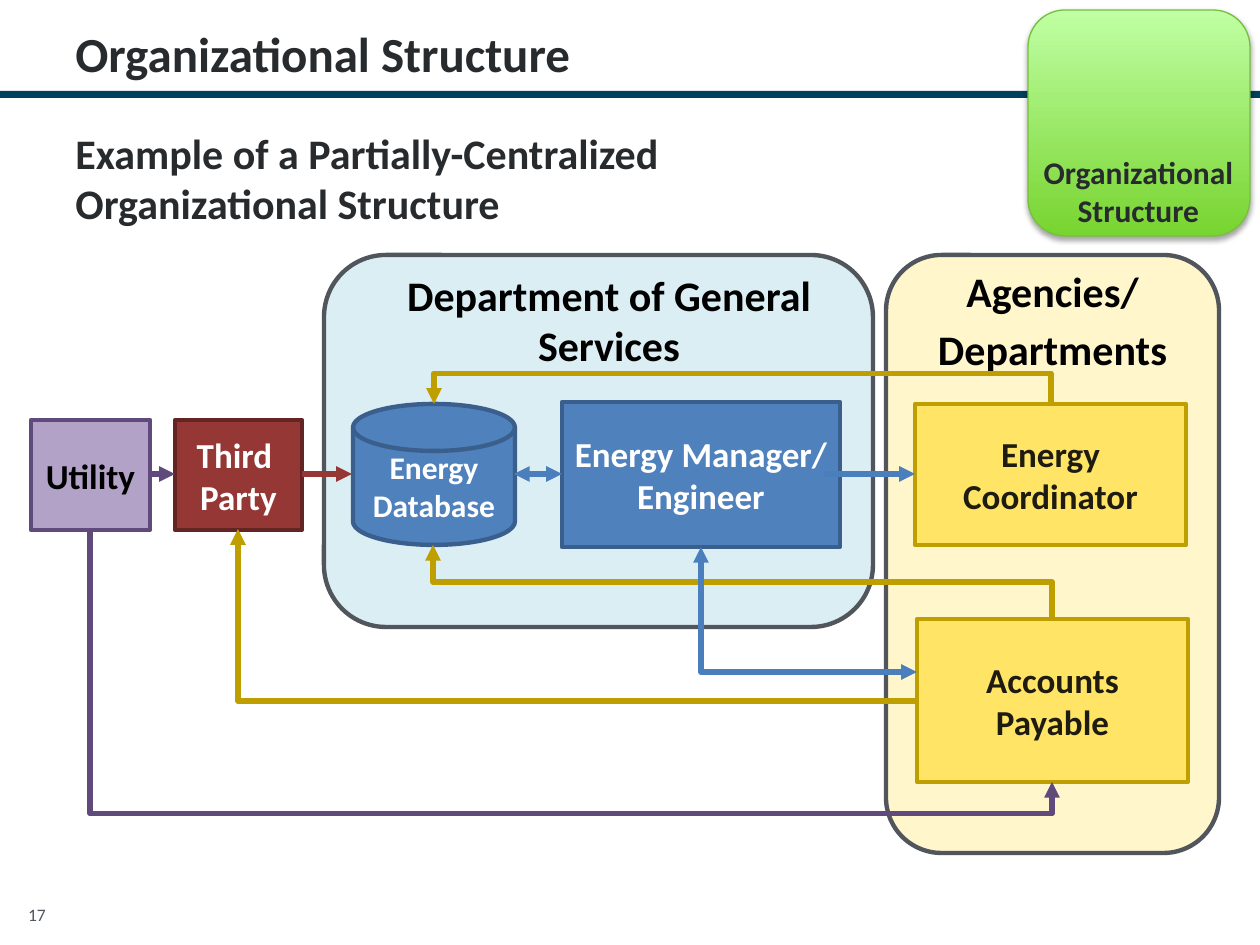
import pptx
import pptx.util
import pptx.dml.color
import pptx.enum.shapes
import pptx.enum.text
import pptx.oxml
import pptx.oxml.ns
import pptx.oxml.xmlchemy
from dataclasses import dataclass

SCALE = 914400 / 126
KIND = pptx.enum.shapes.MSO_SHAPE
LINK = pptx.enum.shapes.MSO_CONNECTOR
ALIGN = pptx.enum.text.PP_ALIGN
ANCHOR = pptx.enum.text.MSO_ANCHOR
qn = pptx.oxml.ns.qn
node = pptx.oxml.xmlchemy.OxmlElement


@dataclass(frozen=True)
class Theme:
    font: str = "Calibri"
    ink: str = "282B2E"
    black: str = "000000"
    white: str = "FFFFFF"
    gray: str = "50565C"
    navy: str = "00425D"
    pale: str = "DBEEF4"
    blue: str = "4F81BD"
    edge: str = "3A5F8C"
    flow: str = "4B7EBC"
    cream: str = "FFF6CC"
    gold: str = "FFE466"
    rim: str = "BF9E00"
    brown: str = "1E1C11"
    red: str = "953735"
    wine: str = "632523"
    lilac: str = "B3A2C7"
    plum: str = "604A7B"
    lime: str = "C0FFA4"
    green: str = "78D430"
    leaf: str = "77C03E"
    title: int = 28
    head: int = 24
    label: int = 20
    small: int = 18
    page: int = 10
    border: float = 2.5
    wire: float = 3


T = Theme()


def px(n):
    return round(n * SCALE)


def rgb(code):
    return pptx.dml.color.RGBColor.from_string(code)


def shift(box, x, y, w, h):
    return box[0] + x, box[1] + y, w, h


def write(shape, text, size=T.label, color=T.ink, bold=True, align=ALIGN.CENTER,
          anchor=ANCHOR.MIDDLE, inset=None, wrap=True, space=None, after=None):
    frame = shape.text_frame
    frame.word_wrap = wrap
    frame.vertical_anchor = anchor
    if inset is not None:
        frame.margin_left = frame.margin_right = px(inset)
        frame.margin_top = frame.margin_bottom = px(inset)
    frame.text = text
    for para in frame.paragraphs:
        para.alignment = align
        para.line_spacing = space
        para.space_after = after
        font = para.font
        font.name, font.size, font.bold = T.font, pptx.util.Pt(size), bold
        font.color.rgb = rgb(color)


def note(slide, box, text, **style):
    shape = slide.shapes.add_textbox(*map(px, box))
    write(shape, text, **{"anchor": ANCHOR.TOP, **style})


def block(slide, box, fill, line=None, kind=KIND.RECTANGLE, text=None, **style):
    shape = slide.shapes.add_shape(kind, *map(px, box))
    shape.shadow.inherit = False
    shape.fill.solid()
    shape.fill.fore_color.rgb = rgb(fill)
    if line:
        shape.line.color.rgb = rgb(line)
        shape.line.width = pptx.util.Pt(T.border)
    else:
        shape.line.fill.background()
    if text:
        write(shape, text, **style)
    return shape


def wire(slide, start, end, color, head=False, tail=True, kind=LINK.STRAIGHT):
    link = slide.shapes.add_connector(kind, *map(px, start + end))
    link.line.color.rgb = rgb(color)
    link.line.width = pptx.util.Pt(T.wire)
    line = link._element.spPr.find(qn("a:ln"))
    for tag, shown in (("a:headEnd", head), ("a:tailEnd", tail)):
        if shown:
            mark = node(tag)
            mark.set("type", "triangle")
            line.append(mark)
    link._element.spPr.append(node("a:effectLst"))
    return link


def bend(slide, start, end, color, turn=None, **ends):
    link = wire(slide, start, end, color, kind=LINK.ELBOW, **ends)
    (x1, y1), (x2, y2) = start, end
    wide, high = abs(y2 - y1), abs(x2 - x1)
    link.left, link.top = px((x1 + x2 - wide) / 2), px((y1 + y2 - high) / 2)
    link.width, link.height = px(wide), px(high)
    frame = link._element.spPr.find(qn("a:xfrm"))
    frame.set("rot", "5400000")
    frame.set("flipH", str(int(y2 < y1)))
    frame.set("flipV", str(int(x2 > x1)))
    shape = link._element.spPr.find(qn("a:prstGeom"))
    if turn is None:
        shape.set("prst", "bentConnector2")
    else:
        guide = node("a:gd")
        guide.set("name", "adj1")
        guide.set("fmla", f"val {round((turn - y1) / (y2 - y1) * 100000)}")
        shape.find(qn("a:avLst")).append(guide)


def header(slide, box):
    block(slide, shift(box, 0, 91, box[2], 7), T.navy)
    note(slide, shift(box, 63, 0, 1134, 116), "Organizational Structure",
         size=T.title, align=ALIGN.LEFT, anchor=ANCHOR.MIDDLE,
         space=pptx.util.Pt(T.title))
    note(slide, shift(box, 63, 121, 869, 115),
         "Example of a Partially-Centralized Organizational Structure",
         size=T.head, align=ALIGN.LEFT)


def badge(slide, box):
    tile = block(slide, box, T.green, T.leaf, KIND.ROUNDED_RECTANGLE)
    tile.line.width = pptx.util.Pt(0.75)
    tile.fill.gradient()
    tile.fill.gradient_angle = 90
    for stop, color in zip(tile.fill.gradient_stops, (T.green, T.lime)):
        stop.color.rgb = rgb(color)
    glow = tile._element.spPr.find(qn("a:effectLst"))
    glow.append(pptx.oxml.parse_xml(
        f'<a:outerShdw {pptx.oxml.ns.nsdecls("a")} blurRad="39370" dist="22860" '
        'dir="5400000" rotWithShape="0"><a:srgbClr val="000000">'
        '<a:alpha val="35000"/></a:srgbClr></a:outerShdw>'))
    note(slide, shift(box, 2, 137, 217, 89), "Organizational\nStructure",
         size=T.small, wrap=False)


def source(slide, box):
    block(slide, shift(box, 0, 0, 119, 110), T.lilac, T.plum,
          text="Utility", color=T.black, inset=0)
    block(slide, shift(box, 144, 0, 127, 110), T.red, T.wine,
          text="Third \nParty", color=T.white, inset=0)


def bureau(slide, box):
    block(slide, box, T.pale, T.gray, KIND.ROUNDED_RECTANGLE)
    note(slide, shift(box, 36, 8, 498, 64), "Department of General Services",
         size=T.head, color=T.black)
    block(slide, shift(box, 29, 149, 162, 141), T.blue, T.edge,
          KIND.FLOWCHART_MAGNETIC_DISK, "Energy Database",
          size=T.small, color=T.white, inset=0)
    block(slide, shift(box, 238, 147, 278, 145), T.blue, T.edge,
          text="Energy Manager/ Engineer", color=T.white)


def agency(slide, box):
    block(slide, box, T.cream, T.gray, KIND.ROUNDED_RECTANGLE)
    note(slide, shift(box, 1, -3, 331, 64), "Agencies/ Departments",
         size=T.head, color=T.black, space=1.15, after=pptx.util.Pt(10))
    for x, y, high, text in ((29, 149, 141, "Energy Coordinator"),
                             (31, 364, 163, "Accounts Payable")):
        block(slide, shift(box, x, y, 271, high), T.gold, T.rim,
              text=text, color=T.brown)


def flows(slide, box):
    left, top = box[:2]

    def at(x, y):
        return left + x, top + y

    for x1, x2, color, head in ((119, 144, T.plum, False),
                                (271, 321, T.red, False),
                                (483, 531, T.flow, True),
                                (793, 884, T.flow, False)):
        wire(slide, at(x1, 220), at(x2, 220), color, head=head)
    bend(slide, at(403, 150), at(1020, 149), T.rim, top + 119, head=True, tail=False)
    bend(slide, at(402, 291), at(1021, 365), T.rim, top + 328, head=True, tail=False)
    bend(slide, at(207, 275), at(886, 447), T.rim, head=True, tail=False)
    bend(slide, at(59, 275), at(1021, 528), T.plum, top + 560)
    bend(slide, at(670, 293), at(886, 418), T.flow, head=True)


def main():
    deck = pptx.Presentation()
    deck.slide_width, deck.slide_height = px(1260), px(945)
    slide = deck.slides.add_slide(deck.slide_layouts[6])
    header(slide, (0, 0, 1260, 236))
    agency(slide, (886, 255, 333, 598))
    bureau(slide, (324, 255, 549, 372))
    source(slide, (31, 420, 271, 110))
    flows(slide, (31, 254, 1188, 600))
    badge(slide, (1028, 10, 222, 226))
    note(slide, (6, 900, 62, 33), "17", size=T.page, color=T.gray,
         bold=False, space=0.9)
    deck.save("out.pptx")


if __name__ == "__main__":
    main()
